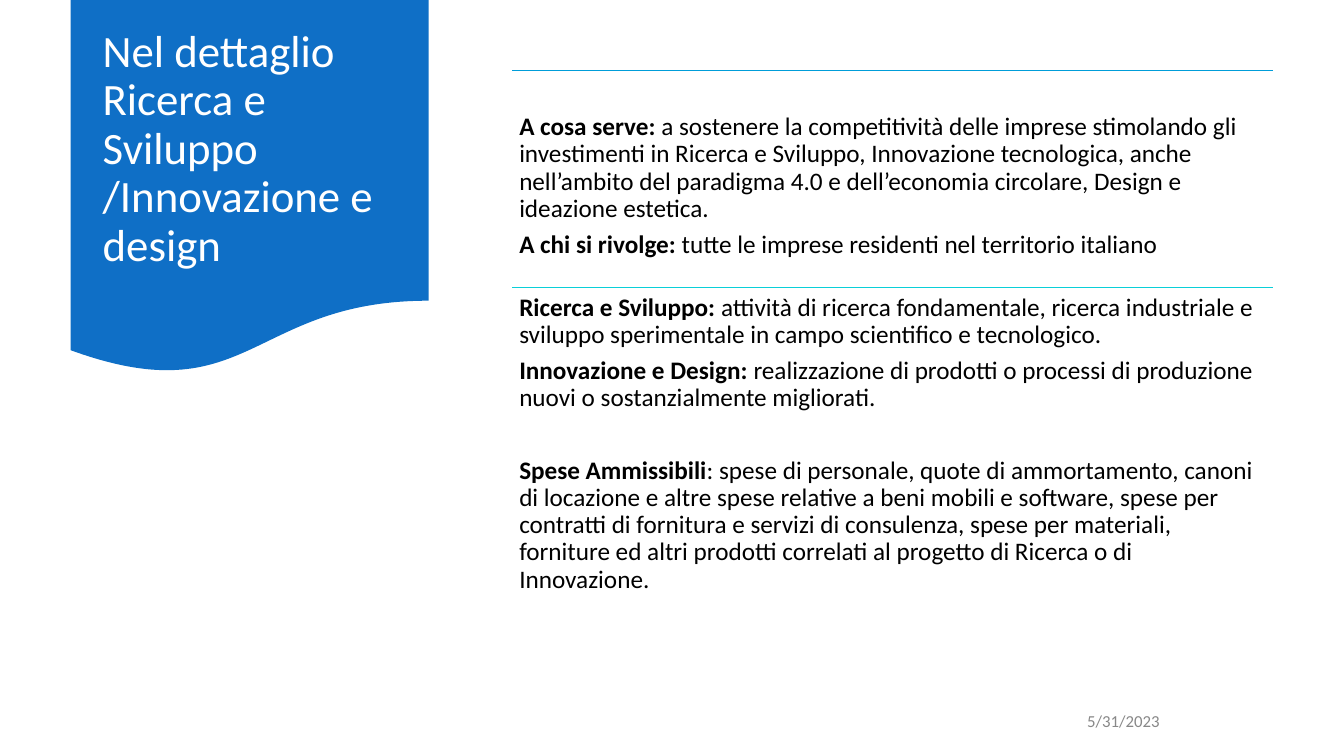
from lxml import etree
from pptx import Presentation
from pptx.dml.color import RGBColor
from pptx.enum.shapes import MSO_CONNECTOR, MSO_SHAPE
from pptx.enum.text import MSO_ANCHOR, PP_ALIGN
from pptx.oxml.ns import qn
from pptx.util import Inches, Pt

STRAIGHT = MSO_CONNECTOR.STRAIGHT
DOCUMENT = MSO_SHAPE.FLOWCHART_DOCUMENT
TOP, MIDDLE = MSO_ANCHOR.TOP, MSO_ANCHOR.MIDDLE
LEFT, RIGHT = PP_ALIGN.LEFT, PP_ALIGN.RIGHT

BLUE = RGBColor(0x0F, 0x6F, 0xC6)
SKY = RGBColor(0x00, 0x9D, 0xD9)
TURQUOISE = RGBColor(0x0A, 0xCF, 0xD8)
WHITE = RGBColor(0xFF, 0xFF, 0xFF)
BLACK = RGBColor(0x00, 0x00, 0x00)
GREY = RGBColor(0x88, 0x88, 0x88)

FONT = "Calibri"
COLUMN_LEFT, COLUMN_WIDTH = 5.08, 7.55
ITEM_GAP = 6.3
SECTION_GAP = 32.4

TITLE = "Nel dettaglio\nRicerca e Sviluppo /Innovazione e design"
PURPOSE = [
    (0, "A cosa serve: ",
     "a sostenere la competitività delle imprese stimolando gli investimenti in "
     "Ricerca e Sviluppo, Innovazione tecnologica, anche nell’ambito del paradigma "
     "4.0 e dell’economia circolare, Design e ideazione estetica."),
    (ITEM_GAP, "A chi si rivolge: ",
     "tutte le imprese residenti nel territorio italiano"),
]
ACTIVITIES = [
    (0, "Ricerca e Sviluppo: ",
     "attività di ricerca fondamentale, ricerca industriale e sviluppo "
     "sperimentale in campo scientifico e tecnologico."),
    (ITEM_GAP, "Innovazione e Design: ",
     "realizzazione di prodotti o processi di produzione nuovi o "
     "sostanzialmente migliorati."),
    (SECTION_GAP, "Spese Ammissibili",
     ": spese di personale, quote di ammortamento, canoni di locazione e altre "
     "spese relative a beni mobili e software, spese per contratti di fornitura e "
     "servizi di consulenza, spese per materiali, forniture ed altri prodotti "
     "correlati al progetto di Ricerca o di Innovazione."),
]


def add_run(paragraph, text, size, color, bold=False):
    for index, line in enumerate(text.split("\n")):
        if index:
            paragraph.add_line_break()
        run = paragraph.add_run()
        run.text = line
        run.font.name = FONT
        run.font.size = Pt(size)
        run.font.bold = bold
        run.font.color.rgb = color


def add_text(slide, box, items, size=18, color=BLACK, anchor=TOP, align=LEFT,
             line_spacing=0.9, insets=(0.07, 0.07)):
    frame = slide.shapes.add_textbox(*map(Inches, box)).text_frame
    frame.word_wrap = True
    frame.vertical_anchor = anchor
    frame.margin_left = frame.margin_right = Inches(insets[0])
    frame.margin_top = frame.margin_bottom = Inches(insets[1])
    for index, (gap, heading, body) in enumerate(items):
        paragraph = frame.add_paragraph() if index else frame.paragraphs[0]
        paragraph.alignment = align
        paragraph.line_spacing = line_spacing
        if gap:
            paragraph.space_before = Pt(gap)
        if heading:
            add_run(paragraph, heading, size, color, bold=True)
        add_run(paragraph, body, size, color)


def add_rule(slide, top, color):
    rule = slide.shapes.add_connector(
        STRAIGHT, Inches(COLUMN_LEFT), Inches(top),
        Inches(COLUMN_LEFT + COLUMN_WIDTH), Inches(top))
    rule.line.color.rgb = color
    rule.line.width = Pt(1)
    etree.SubElement(rule._element.spPr, qn("a:effectLst"))


def add_banner(slide):
    banner = slide.shapes.add_shape(
        DOCUMENT, Inches(0.7), Inches(0), Inches(3.55), Inches(3.72))
    banner.shadow.inherit = False
    banner.fill.solid()
    banner.fill.fore_color.rgb = BLUE
    banner.line.fill.background()


def main():
    deck = Presentation()
    deck.slide_width, deck.slide_height = Inches(13.33), Inches(7.5)
    slide = deck.slides.add_slide(deck.slide_layouts[6])

    add_banner(slide)
    add_text(slide, (0.92, 0.19, 3.11, 2.59), [(0, "", TITLE)], size=32,
             color=WHITE, anchor=MIDDLE, insets=(0.1, 0.05))
    add_text(slide, (8.8, 6.95, 2.8, 0.4), [(0, "", "5/31/2023")], size=12,
             color=GREY, anchor=MIDDLE, align=RIGHT, line_spacing=1.0,
             insets=(0.1, 0.05))

    add_rule(slide, 0.7, SKY)
    add_text(slide, (COLUMN_LEFT, 1.06, COLUMN_WIDTH, 1.78), PURPOSE)
    add_rule(slide, 2.85, TURQUOISE)
    add_text(slide, (COLUMN_LEFT, 2.85, COLUMN_WIDTH, 3.9), ACTIVITIES)

    deck.save("out.pptx")


if __name__ == "__main__":
    main()
